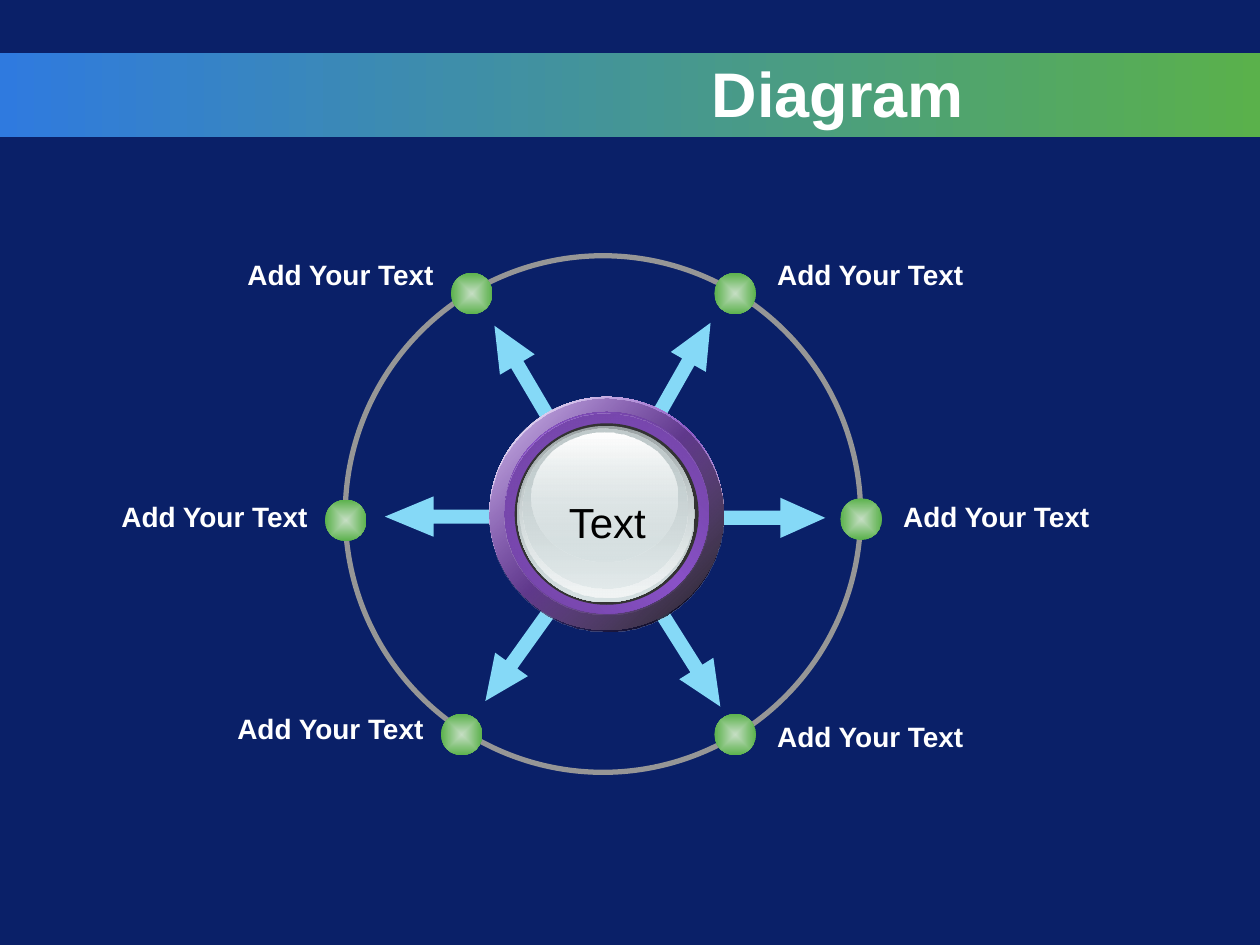
from lxml import etree
from pptx import Presentation
from pptx import util as u
from pptx.dml.color import RGBColor
from pptx.enum import shapes, text
from pptx.oxml import ns

COLORS = {
    "background": "0A2068", "white": "FFFFFF", "black": "000000",
    "blue": "2F7ADF", "green": "5AB14B", "pale_green": "C6DEC4",
    "arrow": "85D9F7", "ring": "969696", "violet": "8A52C8",
    "plum": "6A3F99", "purple": "7143A4", "rim": "333333",
    "steel": "99A1A2", "silver": "D6E1E2", "mist": "F2F5F5", "gray": "C1CBCC",
}
ARROWS = [
    (0.64, -1.14, 0.87, 299.6), (0.7, 1.16, 0.87, 57.8),
    (-0.64, -1.12, 0.87, 239.5), (-0.68, 1.13, 0.87, 125.6),
    (1.33, 0.03, 0.87, 0), (-1.26, 0.02, 0.94, 180),
]
NODES = [
    (1.05, -1.75, -0.15), (-1.04, -1.75, -0.15), (2.05, 0.04, -0.02),
    (1.05, 1.75, 0.02), (-2.04, 0.05, -0.03), (-1.12, 1.75, -0.05),
]
HUB_LAYERS = [
    (0, 0, 1.86, 1.85, 45, [(0, "white", 100), (50, "violet", 100), (100, "white", 100)]),
    (0, 0.01, 1.86, 1.85, 45, [(0, "violet", 32), (100, "black", 90)]),
    (0.12, 0.12, 1.62, 1.6, 315, [(0, "plum", 100), (50, "violet", 100), (100, "plum", 100)]),
    (0.12, 0.13, 1.62, 1.6, 45, [(0, "purple", 100), (100, "violet", 0)]),
    (0.2, 0.21, 1.46, 1.44, None, "rim"),
    (0.22, 0.23, 1.41, 1.4, 90, [(0, "steel", 100), (100, "silver", 100)]),
    (0.24, 0.23, 1.38, 1.36, 90, [(0, "silver", 0), (100, "mist", 100)]),
    (0.26, 0.25, 1.31, 1.27, 90, [(0, "gray", 100), (100, "silver", 48)]),
    (0.33, 0.28, 1.16, 1.03, 90, [(0, "white", 100), (100, "silver", 38)]),
]


def color(name):
    """Return the named palette colour."""
    return RGBColor.from_string(COLORS[name])


def fill_gradient(shape, stops, angle=None):
    """Fill a shape with a linear gradient, or a centred one without an angle."""
    shape.fill.background()
    properties = shape._element.spPr
    gradient = etree.Element(ns.qn("a:gradFill"), rotWithShape="1")
    stop_list = etree.SubElement(gradient, ns.qn("a:gsLst"))
    for position, name, opacity in stops:
        stop = etree.SubElement(stop_list, ns.qn("a:gs"), pos=str(position * 1000))
        value = etree.SubElement(stop, ns.qn("a:srgbClr"), val=COLORS[name])
        if opacity < 100:
            etree.SubElement(value, ns.qn("a:alpha"), val=str(opacity * 1000))
    if angle is None:
        center = etree.SubElement(gradient, ns.qn("a:path"), path="shape")
        etree.SubElement(center, ns.qn("a:fillToRect"),
                         l="50000", t="50000", r="50000", b="50000")
    else:
        etree.SubElement(gradient, ns.qn("a:lin"), ang=str(angle * 60000), scaled="1")
    properties.replace(properties.find(ns.qn("a:noFill")), gradient)


def add_shape(slide, kind, box, fill=None, angle=None):
    """Add an unoutlined preset shape with a solid, gradient or empty fill."""
    shape = slide.shapes.add_shape(kind, *map(u.Inches, box))
    shape.shadow.inherit = False
    shape.line.fill.background()
    if fill is None:
        shape.fill.background()
    elif isinstance(fill, str):
        shape.fill.solid()
        shape.fill.fore_color.rgb = color(fill)
    else:
        fill_gradient(shape, fill, angle)
    return shape


def write_text(shape, words, size=16, fill="white", bold=True, align="LEFT"):
    """Write one formatted paragraph into a shape."""
    paragraph = shape.text_frame.paragraphs[0]
    paragraph.alignment = getattr(text.PP_ALIGN, align)
    run = paragraph.add_run()
    run.text = words
    run.font.name = "Arial"
    run.font.size = u.Pt(size)
    run.font.bold = bold
    run.font.color.rgb = color(fill)


def add_label(slide, box, words, **style):
    """Add an unwrapped text box."""
    label = slide.shapes.add_textbox(*map(u.Inches, box))
    label.text_frame.word_wrap = False
    label.text_frame.auto_size = text.MSO_AUTO_SIZE.SHAPE_TO_FIT_TEXT
    write_text(label, words, **style)


def add_header(slide, box):
    """Place the gradient band and the title over it."""
    left, top, width, height = box
    title = slide.shapes.title
    band = add_shape(slide, shapes.MSO_SHAPE.RECTANGLE, box,
                     [(0, "blue", 100), (100, "green", 100)], 0)
    title._element.addprevious(band._element)
    title.left, title.top = u.Inches(left + 0.5), u.Inches(top)
    title.width, title.height = u.Inches(7.25), u.Inches(height - 0.05)
    title.text_frame.vertical_anchor = text.MSO_ANCHOR.MIDDLE
    write_text(title, "Diagram", size=36, align="RIGHT")


def add_arrow(slide, center, length, angle):
    """Add a block arrow turned about its centre."""
    x, y = center
    height = 0.32
    arrow = add_shape(slide, shapes.MSO_SHAPE.RIGHT_ARROW,
                      (x - length / 2, y - height / 2, length, height), "arrow")
    arrow.adjustments[0] = 0.352
    arrow.adjustments[1] = 0.41 * length / height
    arrow.rotation = angle


def add_node(slide, center, label_shift, on_right):
    """Add a green dot with its label on the outer side."""
    x, y = center
    size, width, height = 0.33, 1.72, 0.37
    label_left = x + 0.235 if on_right else x - 0.205 - width
    add_label(slide, (label_left, y + label_shift - height / 2, width, height),
              "Add Your Text", align="LEFT" if on_right else "RIGHT")
    add_shape(slide, shapes.MSO_SHAPE.OVAL, (x - size / 2, y - size / 2, size, size),
              [(0, "pale_green", 100), (100, "green", 100)])


def add_hub(slide, box):
    """Stack the glossy button layers and its caption."""
    left, top, width, height = box
    for x, y, layer_width, layer_height, angle, fill in HUB_LAYERS:
        add_shape(slide, shapes.MSO_SHAPE.OVAL,
                  (left + x, top + y, layer_width, layer_height), fill, angle)
    add_label(slide, (left + 0.51, top + 0.74, 0.85, 0.5), "Text",
              size=24, fill="black", bold=False, align="CENTER")


def add_diagram(slide, box):
    """Place arrows, ring, labelled nodes and hub around the box centre."""
    left, top, width, height = box
    x, y = left + width / 2, top + height / 2
    for dx, dy, length, angle in ARROWS:
        add_arrow(slide, (x + dx, y + dy), length, angle)
    ring = add_shape(slide, shapes.MSO_SHAPE.OVAL, box)
    ring.line.color.rgb = color("ring")
    ring.line.width = u.Pt(3)
    for dx, dy, label_shift in NODES:
        add_node(slide, (x + dx, y + dy), label_shift, dx > 0)
    add_hub(slide, (x - 0.9, y - 0.93, 1.86, 1.85))


def main():
    """Build and save the slide."""
    presentation = Presentation()
    presentation.slide_width, presentation.slide_height = u.Inches(10), u.Inches(7.5)
    slide = presentation.slides.add_slide(presentation.slide_layouts[5])
    slide.background.fill.solid()
    slide.background.fill.fore_color.rgb = color("background")
    add_header(slide, (0, 0.42, 10, 0.67))
    add_diagram(slide, (2.74, 2.03, 4.09, 4.1))
    presentation.save("out.pptx")


if __name__ == "__main__":
    main()
